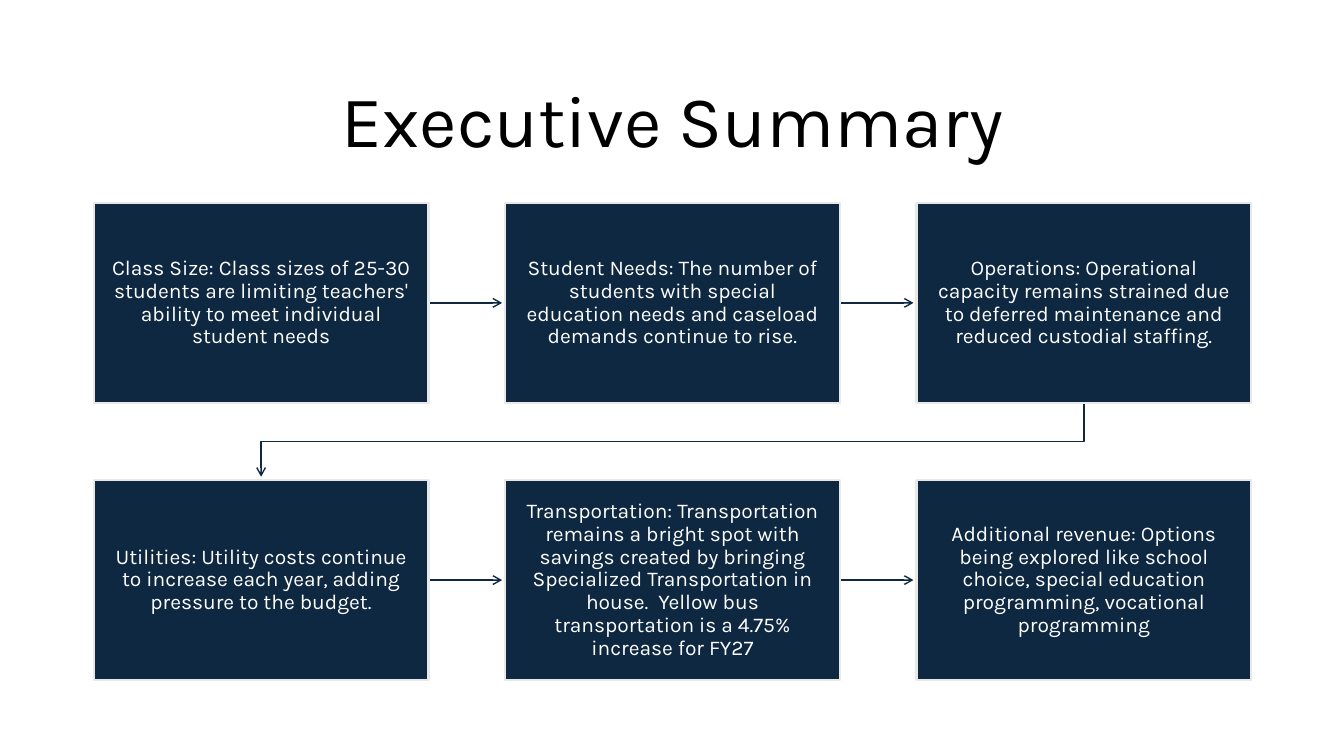
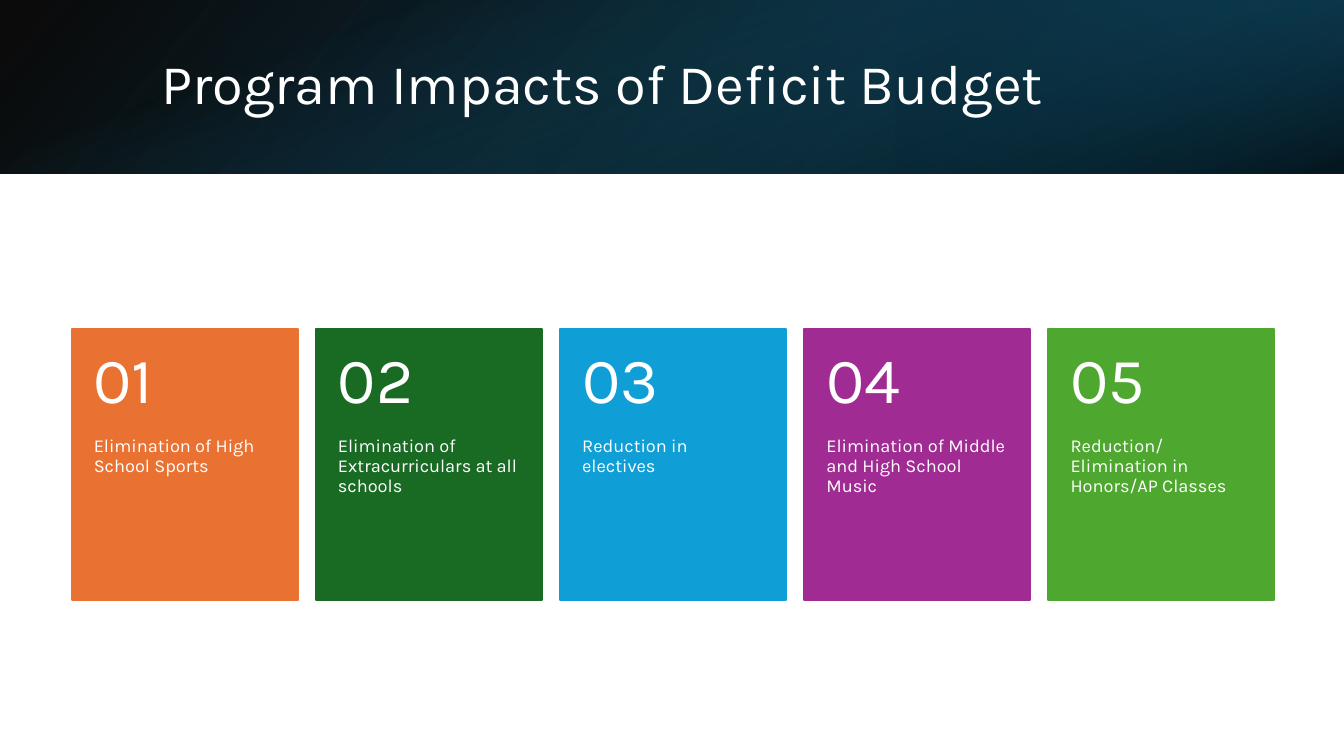
import pptx
import pptx.util
import pptx.dml.color
import pptx.enum.shapes
import pptx.enum.text
import pptx.oxml.ns
import pptx.oxml.xmlchemy

Inches = pptx.util.Inches
RGBColor = pptx.dml.color.RGBColor
PP_ALIGN = pptx.enum.text.PP_ALIGN
MSO_ANCHOR = pptx.enum.text.MSO_ANCHOR
RECTANGLE = pptx.enum.shapes.MSO_SHAPE.RECTANGLE

SLIDE_W, SLIDE_H = 13.33, 7.5
FONT = "Karla"
BLACK = RGBColor(0x00, 0x00, 0x00)
WHITE = RGBColor(0xFF, 0xFF, 0xFF)
NAVY = RGBColor(0x0E, 0x28, 0x41)
PALE_GREY = RGBColor(0xE8, 0xE8, 0xE8)
DEEP_TEAL = RGBColor(0x10, 0x48, 0x62)
DARK_TEAL = RGBColor(0x0B, 0x30, 0x41)
TEAL = RGBColor(0x15, 0x60, 0x82)
ORANGE = RGBColor(0xE9, 0x71, 0x32)
GREEN = RGBColor(0x19, 0x6B, 0x24)
BLUE = RGBColor(0x0F, 0x9E, 0xD5)
PURPLE = RGBColor(0xA0, 0x2B, 0x93)
LIME = RGBColor(0x4E, 0xA7, 0x2E)

FINDINGS = [
    "Class Size: Class sizes of 25-30 students are limiting teachers' ability to meet individual student needs",
    "Student Needs: The number of students with special education needs and caseload demands continue to rise.",
    "Operations: Operational capacity remains strained due to deferred maintenance and reduced custodial staffing.",
    "Utilities: Utility costs continue to increase each year, adding pressure to the budget.",
    "Transportation: Transportation remains a bright spot with savings created by bringing Specialized "
    "Transportation in house.  Yellow bus transportation is a 4.75% increase for FY27",
    "Additional revenue: Options being explored like school choice, special education programming, "
    "vocational programming",
]
IMPACTS = [
    ("Elimination of High School Sports", ORANGE),
    ("Elimination of Extracurriculars at all schools", GREEN),
    ("Reduction in electives", BLUE),
    ("Elimination of Middle and High School Music", PURPLE),
    ("Reduction/Elimination in Honors/AP Classes", LIME),
]


def grid(box, cols, rows, gap):
    """Return the cells of an evenly spaced grid, row by row."""
    x, y, w, h = box
    cw = (w - gap * (cols - 1)) / cols
    ch = (h - gap * (rows - 1)) / rows
    return [(x + c * (cw + gap), y + r * (ch + gap), cw, ch)
            for r in range(rows) for c in range(cols)]


def write(sp, text, size, color=WHITE, align=PP_ALIGN.LEFT,
          anchor=MSO_ANCHOR.MIDDLE, insets=(0.1, 0.05, 0.1, 0.05)):
    """Fill a shape with one formatted paragraph."""
    tf = sp.text_frame
    tf.text = text
    tf.word_wrap = True
    tf.auto_size = pptx.enum.text.MSO_AUTO_SIZE.NONE
    tf.vertical_anchor = anchor
    tf.margin_left, tf.margin_top, tf.margin_right, tf.margin_bottom = map(Inches, insets)
    p = tf.paragraphs[0]
    p.alignment = align
    p.line_spacing = 0.9
    font = p.runs[0].font
    font.name, font.size = FONT, pptx.util.Pt(size)
    font.color.rgb = color


def add_title(s, box, text, size, color, align):
    """Place the title placeholder in front of what is drawn so far."""
    title = s.shapes.title
    title.left, title.top, title.width, title.height = map(Inches, box)
    write(title, text, size, color, align)
    s.shapes._spTree.append(title._element)


def add_rect(s, box, fill, line):
    """Add a flat rectangle with a thin outline."""
    sp = s.shapes.add_shape(RECTANGLE, *map(Inches, box))
    sp.shadow.inherit = False
    sp.fill.solid()
    sp.fill.fore_color.rgb = fill
    sp.line.color.rgb = line
    sp.line.width = pptx.util.Pt(1.5)
    return sp


def add_gradient(s, box, stops, angle, rotation=0, flip=False):
    """Add a borderless rectangle with a translucent two-stop gradient."""
    sp = s.shapes.add_shape(RECTANGLE, *map(Inches, box))
    sp.shadow.inherit = False
    sp.line.fill.background()
    sp.rotation = rotation
    if flip:
        sp._element.spPr.get_or_add_xfrm().set("flipH", "1")
    sp.fill.gradient()
    sp.fill.gradient_angle = 360 - angle
    for stop, (position, color, opacity) in zip(sp.fill.gradient_stops, stops):
        stop.position = position
        stop.color.rgb = color
        rgb = stop._gs.find(pptx.oxml.ns.qn("a:srgbClr"))
        alpha = pptx.oxml.xmlchemy.OxmlElement("a:alpha")
        alpha.set("val", str(opacity * 1000))
        rgb.append(alpha)


def style_arrow(sp):
    """Draw a line in navy with an open arrowhead and no shadow."""
    sp.line.color.rgb = NAVY
    sp.line.width = pptx.util.Pt(1)
    tail = pptx.oxml.xmlchemy.OxmlElement("a:tailEnd")
    tail.set("type", "arrow")
    sp.line._get_or_add_ln().append(tail)
    spPr = sp._element.spPr
    if spPr.find(pptx.oxml.ns.qn("a:effectLst")) is None:
        spPr.append(pptx.oxml.xmlchemy.OxmlElement("a:effectLst"))


def link_cards(s, start, end, clearance=0.03):
    """Join two cards with a straight arrow, or a stepped one between rows."""
    x, y, w, h = start
    nx, ny, nw, _ = end
    if y == ny:
        mid = Inches(y + h / 2)
        sp = s.shapes.add_connector(pptx.enum.shapes.MSO_CONNECTOR.STRAIGHT,
                                    Inches(x + w), mid, Inches(nx - clearance), mid)
    else:
        x0, x1, turn = x + w / 2, nx + nw / 2, (y + h + ny) / 2
        path = [(x0, turn), (x1, turn), (x1, ny - clearance)]
        fb = s.shapes.build_freeform(Inches(x0), Inches(y + h))
        fb.add_line_segments([tuple(map(Inches, pt)) for pt in path], close=False)
        sp = fb.convert_to_shape()
        sp.shadow.inherit = False
        sp.fill.background()
    style_arrow(sp)


def add_flow(s, box):
    """Lay out the findings as a two-row flow of linked cards."""
    cells = grid(box, 3, 2, 0.76)
    for start, end in zip(cells, cells[1:]):
        link_cards(s, start, end)
    for cell, text in zip(cells, FINDINGS):
        write(add_rect(s, cell, NAVY, PALE_GREY), text, 15,
              align=PP_ALIGN.CENTER, insets=(0.16, 0.17, 0.16, 0.17))


def add_band(s, box):
    """Layer three gradients into a dark title band."""
    x, y, w, h = box
    third = w / 3
    add_gradient(s, box, [(0, BLACK, 96), (1, DEEP_TEAL, 100)], 140, flip=True)
    add_gradient(s, (x + w - third, y, third, h),
                 [(0.19, DARK_TEAL, 68), (1, TEAL, 79)], 320, rotation=180, flip=True)
    add_gradient(s, (x + (w - h) / 2, y + (h - w) / 2, h, w),
                 [(0.23, TEAL, 0), (0.99, BLACK, 74)], 340, rotation=90)


def add_impact(s, box, number, text, color):
    """Add a coloured card with a large number above its text."""
    x, y, w, h = box
    head = h * 0.4
    add_rect(s, box, color, color)
    body = s.shapes.add_textbox(*map(Inches, (x, y + head, w, h - head)))
    write(body, text, 13, anchor=MSO_ANCHOR.TOP, insets=(0.22, 0, 0.22, 0.36))
    label = s.shapes.add_textbox(*map(Inches, (x, y, w, head)))
    write(label, f"{number:02d}", 46, insets=(0.22, 0.18, 0.22, 0.18))


def summary_slide(prs):
    """Build the executive summary."""
    s = prs.slides.add_slide(prs.slide_layouts[5])
    add_title(s, (0.92, 0.61, 11.5, 1.24), "Executive Summary", 52, BLACK, PP_ALIGN.CENTER)
    add_flow(s, (0.93, 2.01, 11.48, 4.74))


def impacts_slide(prs):
    """Build the row of numbered program impacts."""
    s = prs.slides.add_slide(prs.slide_layouts[5])
    add_band(s, (0, 0, SLIDE_W, 1.72))
    add_title(s, (1.5, 0.38, 10.98, 0.96), "Program Impacts of Deficit Budget",
              40, WHITE, PP_ALIGN.LEFT)
    cells = grid((0.71, 3.26, 11.93, 2.69), 5, 1, 0.18)
    for number, (cell, (text, color)) in enumerate(zip(cells, IMPACTS), 1):
        add_impact(s, cell, number, text, color)


def main():
    """Build and save the presentation."""
    prs = pptx.Presentation()
    prs.slide_width, prs.slide_height = Inches(SLIDE_W), Inches(SLIDE_H)
    summary_slide(prs)
    impacts_slide(prs)
    prs.save("out.pptx")


if __name__ == "__main__":
    main()
